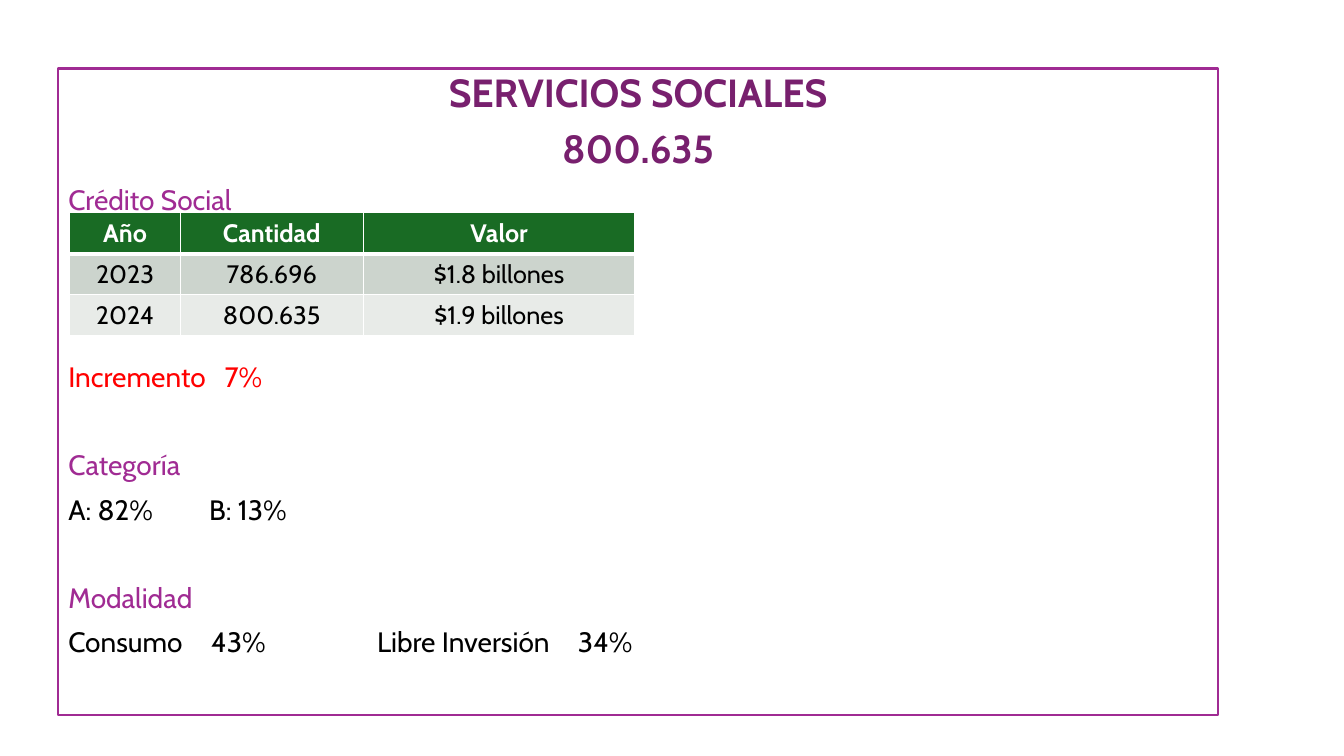
from pptx import Presentation
from pptx.dml.color import RGBColor
from pptx.enum.shapes import MSO_SHAPE
from pptx.enum.text import MSO_ANCHOR, PP_ALIGN
from pptx.oxml.ns import qn
from pptx.util import Pt
from lxml import etree

RECT = MSO_SHAPE.RECTANGLE
TOP = MSO_ANCHOR.TOP
LEFT, CENTER = PP_ALIGN.LEFT, PP_ALIGN.CENTER

COLORS = {
    "title": "78206E", "heading": "A02B93", "alert": "FF0000", "text": "000000",
    "white": "FFFFFF", "header": "196B24", "band1": "CCD4CD", "band2": "E8EBE8",
}
FONT = "Cabin"
PANEL = (41.76, 48.96, 828, 461.52)
TABLE_AT = (49.9, 151.9)
COL_WIDTHS = (79, 130.6, 194.2)
ROW_HEIGHT = 29.3
GAP, LINE_PITCH = 10, 31.6

STYLES = {
    "title": {"size": 28, "bold": True, "align": CENTER},
    "heading": {"size": 20, "bold": False, "align": LEFT},
    "alert": {"size": 20, "bold": False, "align": LEFT},
    "text": {"size": 20, "bold": False, "align": LEFT},
}
# style, text, lines skipped above, tab stops
LINES = [
    ("title", "SERVICIOS SOCIALES", 0, ()),
    ("title", "800.635", 0, ()),
    ("heading", "Crédito Social", 0, ()),
    ("alert", "Incremento\t7%", 3, (111.6,)),
    ("heading", "Categoría", 1, ()),
    ("text", "A: 82%\tB: 13%", 0, (100.6,)),
    ("heading", "Modalidad", 1, ()),
    ("text", "Consumo\t43%\tLibre Inversión\t34%", 0, (102, 220.5, 364)),
]
ROWS = [
    ("Año", "Cantidad", "Valor"),
    ("2023", "786.696", "$1.8 billones"),
    ("2024", "800.635", "$1.9 billones"),
]
ROW_FILLS = ("header", "band1", "band2")


def rgb(name):
    """Return the named colour."""
    return RGBColor.from_string(COLORS[name])


def add_text(p, text, size, bold, color, align):
    """Write one formatted run into a paragraph."""
    p.alignment = align
    r = p.add_run()
    r.text = text
    for key, value in {"name": FONT, "size": Pt(size), "bold": bold}.items():
        setattr(r.font, key, value)
    r.font.color.rgb = rgb(color)


def add_tabs(p, stops):
    """Add left tab stops to a paragraph."""
    tabs = etree.SubElement(p._p.get_or_add_pPr(), qn("a:tabLst"))
    for stop in stops:
        etree.SubElement(tabs, qn("a:tab"), pos=str(Pt(stop)), algn="l")


def add_borders(cell, widths):
    """Add white borders given as a side-to-width dict."""
    tcPr = cell._tc.get_or_add_tcPr()
    for side, width in widths.items():
        ln = etree.SubElement(tcPr, qn(f"a:ln{side}"), w=str(Pt(width)))
        fill = etree.SubElement(ln, qn("a:solidFill"))
        etree.SubElement(fill, qn("a:srgbClr"), val=COLORS["white"])


def add_panel(slide):
    """Draw the framed panel and its text."""
    sp = slide.shapes.add_shape(RECT, *map(Pt, PANEL))
    sp.shadow.inherit = False
    sp.fill.solid()
    sp.fill.fore_color.rgb = rgb("white")
    sp.line.color.rgb = rgb("heading")
    sp.line.width = Pt(1.5)
    tf = sp.text_frame
    tf.word_wrap = True
    tf.vertical_anchor = TOP
    for i, (style, text, skipped, stops) in enumerate(LINES):
        p = tf.add_paragraph() if i else tf.paragraphs[0]
        if stops:
            add_tabs(p, stops)
        p.line_spacing = 0.9
        p.space_before = Pt(GAP + skipped * LINE_PITCH if i else 0)
        add_text(p, text, color=style, **STYLES[style])


def add_credit_table(slide):
    """Draw the table of yearly credit."""
    size = (sum(COL_WIDTHS), ROW_HEIGHT * len(ROWS))
    table = slide.shapes.add_table(
        len(ROWS), len(COL_WIDTHS), *map(Pt, TABLE_AT + size)).table
    for column, width in zip(table.columns, COL_WIDTHS):
        column.width = Pt(width)
    for i, values in enumerate(ROWS):
        table.rows[i].height = Pt(ROW_HEIGHT)
        for j, value in enumerate(values):
            cell = table.cell(i, j)
            add_borders(cell, {"L": 1, "R": 1, "T": 3 if i == 1 else 1,
                               "B": 3 if i == 0 else 1})
            cell.fill.solid()
            cell.fill.fore_color.rgb = rgb(ROW_FILLS[i])
            add_text(cell.text_frame.paragraphs[0], value, 18, i == 0,
                     "text" if i else "white", CENTER)


def main():
    """Build the slide and save it."""
    prs = Presentation()
    prs.slide_width, prs.slide_height = Pt(960), Pt(540)
    slide = prs.slides.add_slide(prs.slide_layouts[6])
    add_panel(slide)
    add_credit_table(slide)
    prs.save("out.pptx")


if __name__ == "__main__":
    main()
